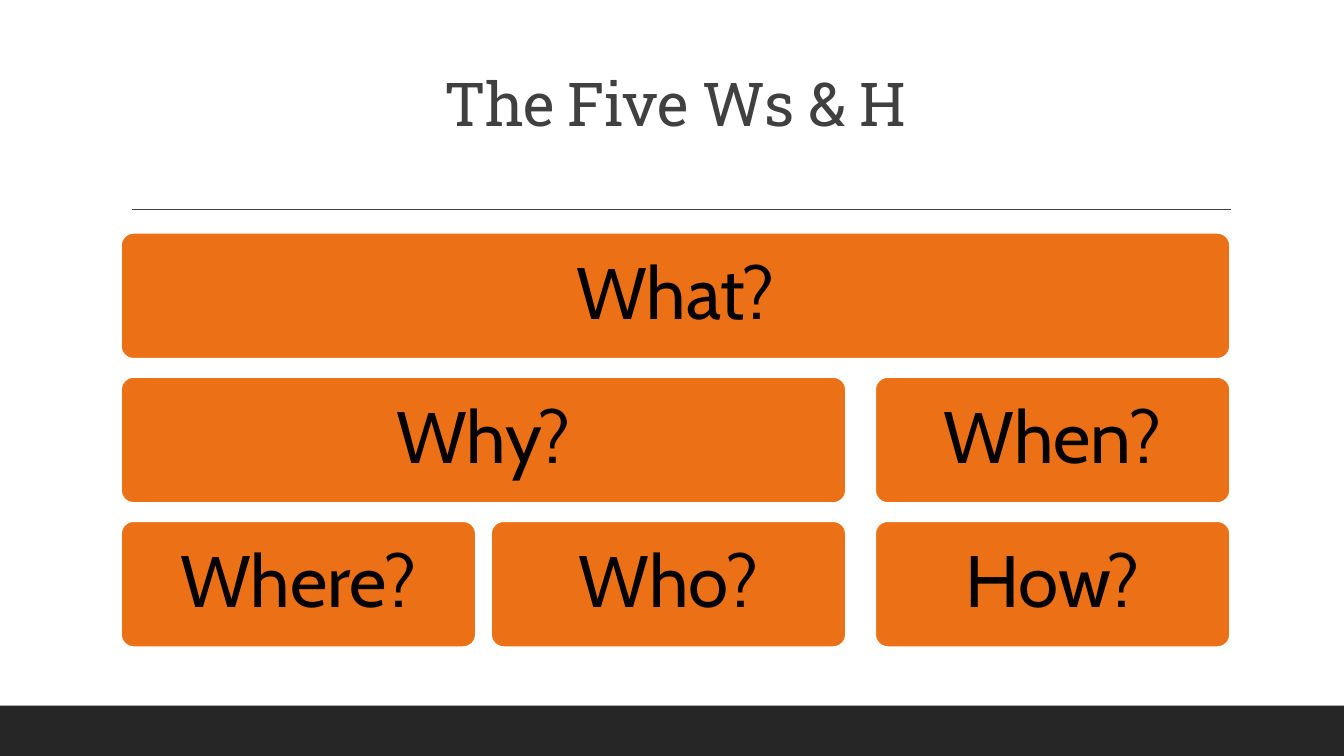
from lxml import etree
from pptx import Presentation
from pptx import util as u
from pptx.dml.color import RGBColor
from pptx.enum import shapes, text
from pptx.oxml.ns import qn

COLORS = {"paper": "FFFFFF", "footer": "262626", "gray": "404040",
          "orange": "EC7016", "black": "000000"}


class QuestionSlide:
    """Draw the elements of a slide in one shared style."""

    title_font = {"name": "Roboto Slab", "size": u.Pt(43.2)}
    card_font = {"name": "Cabin", "size": u.Pt(52)}

    def __init__(self, deck):
        self.page = deck.slides.add_slide(deck.slide_layouts[6])

    def color(self, name):
        return RGBColor.from_string(COLORS[name])

    def label(self, box, words, font, color, margins, anchor):
        frame = box.text_frame
        layout = {"word_wrap": True, "vertical_anchor": anchor}
        sides = ("margin_left", "margin_top", "margin_right", "margin_bottom")
        layout.update(zip(sides, map(u.Inches, margins)))
        for key, value in layout.items():
            setattr(frame, key, value)
        para = frame.paragraphs[0]
        para.alignment = text.PP_ALIGN.CENTER
        para.line_spacing = 0.9
        span = para.add_run()
        span.text = words
        for key, value in font.items():
            setattr(span.font, key, value)
        span.font.color.rgb = self.color(color)
        return span

    def block(self, kind, place, fill):
        box = self.page.shapes.add_shape(kind, *map(u.Inches, place))
        box.shadow.inherit = False
        box.fill.solid()
        box.fill.fore_color.rgb = self.color(fill)
        box.line.fill.background()
        return box

    def footer(self, *place):
        self.block(shapes.MSO_SHAPE.RECTANGLE, place, "footer")

    def rule(self, *ends):
        line = self.page.shapes.add_connector(
            shapes.MSO_CONNECTOR.STRAIGHT, *map(u.Inches, ends))
        line.line.color.rgb = self.color("gray")
        line.line.width = u.Pt(1)
        etree.SubElement(line._element.spPr, qn("a:effectLst"))

    def title(self, words, *place):
        box = self.page.shapes.add_textbox(*map(u.Inches, place))
        span = self.label(box, words, self.title_font, "gray",
                          (0.1, 0.05, 0.1, 0.72), text.MSO_ANCHOR.BOTTOM)
        span._r.get_or_add_rPr().set("spc", "-50")

    def card(self, words, *place):
        box = self.block(shapes.MSO_SHAPE.ROUNDED_RECTANGLE, place, "orange")
        box.adjustments[0] = 0.1
        box.line.color.rgb = self.color("paper")
        box.line.width = u.Pt(1.25)
        self.label(box, words, self.card_font, "black", (0.22,) * 4,
                   text.MSO_ANCHOR.MIDDLE)


def main():
    deck = Presentation()
    deck.slide_width, deck.slide_height = u.Inches(13.33), u.Inches(7.5)
    slide = QuestionSlide(deck)
    slide.footer(0, 7, 13.33, 0.5)
    slide.rule(1.31, 2.08, 12.21, 2.08)
    slide.title("The Five Ws & H", 1.2, 0.6, 11, 1.5)

    lefts, card_width, card_height = (1.2, 4.87, 8.68), 3.52, 1.25
    top, row_step = 2.31, 1.43
    rows = [[("What?", 0, 2)],
            [("Why?", 0, 1), ("When?", 2, 2)],
            [("Where?", 0, 0), ("Who?", 1, 1), ("How?", 2, 2)]]
    for row, cards in enumerate(rows):
        for words, first, last in cards:
            width = lefts[last] + card_width - lefts[first]
            slide.card(words, lefts[first], top + row * row_step,
                       width, card_height)
    deck.save("out.pptx")


if __name__ == "__main__":
    main()
